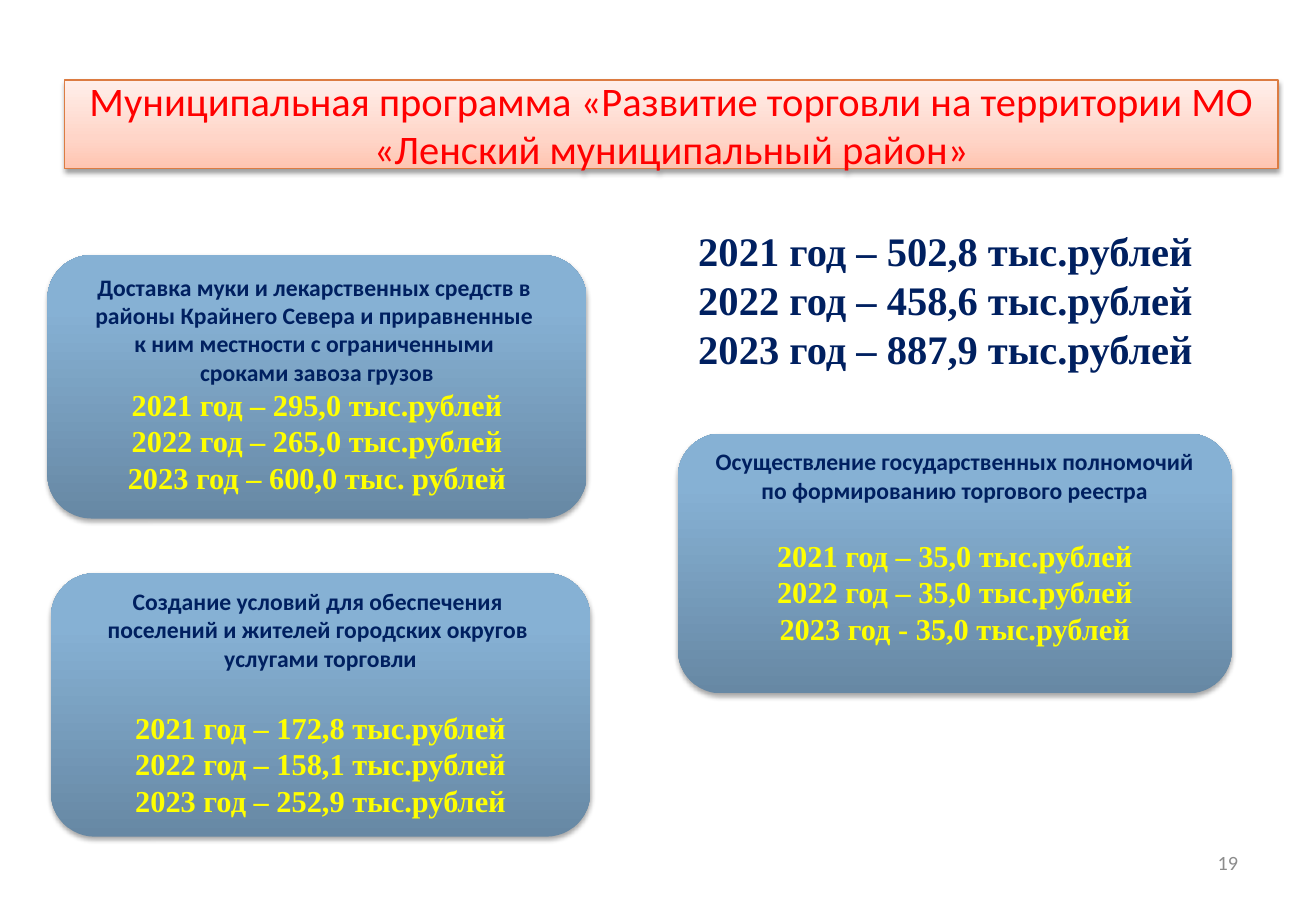
"""Build the slide on the municipal trade development programme."""
from dataclasses import dataclass

from lxml import etree
from pptx import Presentation
from pptx import util as u
from pptx.dml.color import RGBColor
from pptx.enum import shapes, text
from pptx.oxml import ns

COLORS = {"red": "FF0000", "navy": "002060", "yellow": "FFFF00",
          "gray": "8C8C8C", "orange": "DC7C42"}
PEACH = [(0, "FFC5B1"), (35, "FFD5C8"), (100, "FFEFEA")]
BLUE = [(0, "6788A4"), (80, "86B1D4"), (100, "86B2D7")]
CENTER = text.PP_ALIGN.CENTER


@dataclass
class Style:
    font: str
    size: float
    color: str
    bold: bool = False


@dataclass
class Frame:
    left: float
    top: float
    width: float
    height: float


@dataclass
class Card:
    frame: Frame
    inset: float
    gap: float
    heading: list[str]
    amounts: list[str]


TITLE = Style("Calibri", 24, "red")
NUMBER = Style("Calibri", 12, "gray")
HEADING = Style("Calibri", 14, "navy", True)
AMOUNT = Style("Times New Roman", 18, "yellow", True)
TOTAL = Style("Times New Roman", 24, "navy", True)

CARDS = [
    Card(Frame(28.1, 151.2, 319.7, 156.2), 2.8, 0,
         ["Доставка муки и лекарственных средств в ",
          "районы Крайнего Севера и приравненные ",
          "к ним местности с ограниченными ",
          "сроками завоза грузов"],
         ["2021 год – 295,0 тыс.рублей",
          "2022 год – 265,0 тыс.рублей",
          "2023 год – 600,0 тыс. рублей"]),
    Card(Frame(401.8, 257, 328.3, 154.1), 0.7, 19.5,
         ["Осуществление государственных полномочий",
          "по формированию торгового реестра"],
         ["2021 год – 35,0 тыс.рублей",
          "2022 год – 35,0 тыс.рублей",
          "2023 год - 35,0 тыс.рублей"]),
    Card(Frame(30.2, 339.8, 319.7, 156.2), 0.4, 22,
         ["Создание условий для обеспечения ",
          "поселений и жителей городских округов ",
          "услугами торговли"],
         ["2021 год – 172,8 тыс.рублей",
          "2022 год – 158,1 тыс.рублей",
          "2023 год – 252,9 тыс.рублей"]),
]
TOTALS = ["2021 год – 502,8 тыс.рублей",
          "2022 год – 458,6 тыс.рублей",
          "2023 год – 887,9 тыс.рублей"]


def points(frame: Frame) -> list:
    return [u.Pt(v) for v in (frame.left, frame.top, frame.width, frame.height)]


def add_node(parent, tag: str, **attributes):
    node = etree.SubElement(parent, ns.qn(tag))
    for name, value in attributes.items():
        node.set(name, str(value))
    return node


def add_panel(page, kind, frame: Frame, stops: list, shadow_alpha: int,
              shadow_distance: float):
    """Add a shape with an upward gradient and a soft shadow below it."""
    panel = page.shapes.add_shape(kind, *points(frame))
    panel.shadow.inherit = False
    panel.fill.gradient()
    panel.fill.gradient_angle = 90
    properties = panel.element.spPr
    stop_list = properties.find(".//" + ns.qn("a:gsLst"))
    for stop in list(stop_list):
        stop_list.remove(stop)
    for position, color in stops:
        stop = add_node(stop_list, "a:gs", pos=position * 1000)
        add_node(stop, "a:srgbClr", val=color)
    panel.line.fill.background()
    effects = properties.find(ns.qn("a:effectLst"))
    shadow = add_node(effects, "a:outerShdw", blurRad=u.Pt(3.1),
                      dist=u.Pt(shadow_distance), dir=5400000, rotWithShape=0)
    black = add_node(shadow, "a:srgbClr", val="000000")
    add_node(black, "a:alpha", val=shadow_alpha * 1000)
    return panel


def write_lines(box, lines: list[tuple[str, Style]], align, wrap: bool = True) -> None:
    frame = box.text_frame
    frame.word_wrap = wrap
    frame.text = "\n".join(line for line, _ in lines)
    for para, (_, style) in zip(frame.paragraphs, lines):
        para.alignment = align
        for span in para.runs:
            span.font.name = style.font
            span.font.size = u.Pt(style.size)
            span.font.bold = style.bold
            span.font.color.rgb = RGBColor.from_string(COLORS[style.color])


def add_card(page, card: Card) -> None:
    box = add_panel(page, shapes.MSO_SHAPE.ROUNDED_RECTANGLE, card.frame, BLUE, 35, 1.8)
    box.text_frame.vertical_anchor = text.MSO_ANCHOR.TOP
    box.text_frame.margin_top = u.Pt(card.inset)
    lines = [(line, HEADING) for line in card.heading]
    lines += [(line, AMOUNT) for line in card.amounts]
    write_lines(box, lines, CENTER, False)
    first_amount = box.text_frame.paragraphs[len(card.heading)]
    first_amount.space_before = u.Pt(card.gap)


def main() -> None:
    deck = Presentation()
    deck.slide_width, deck.slide_height = u.Pt(780), u.Pt(540)
    page = deck.slides.add_slide(deck.slide_layouts[6])

    title = add_panel(page, shapes.MSO_SHAPE.RECTANGLE,
                      Frame(38.2, 47.5, 719.3, 52.6), PEACH, 38, 1.6)
    title.line.color.rgb = RGBColor.from_string(COLORS["orange"])
    title.line.width = u.Pt(0.75)
    title.text_frame.vertical_anchor = text.MSO_ANCHOR.MIDDLE
    write_lines(title, [("Муниципальная программа «Развитие торговли на территории "
                         "МО «Ленский муниципальный район»", TITLE)], CENTER)

    number = page.shapes.add_textbox(*points(Frame(558.7, 500.4, 182.2, 28.8)))
    write_lines(number, [("19", NUMBER)], text.PP_ALIGN.RIGHT)

    for card in CARDS:
        add_card(page, card)

    totals = page.shapes.add_textbox(*points(Frame(406.8, 117.4, 326.2, 144)))
    totals.text_frame.margin_top = u.Pt(16.8)
    write_lines(totals, [(line, TOTAL) for line in TOTALS], text.PP_ALIGN.LEFT)

    deck.save("out.pptx")


if __name__ == "__main__":
    main()
